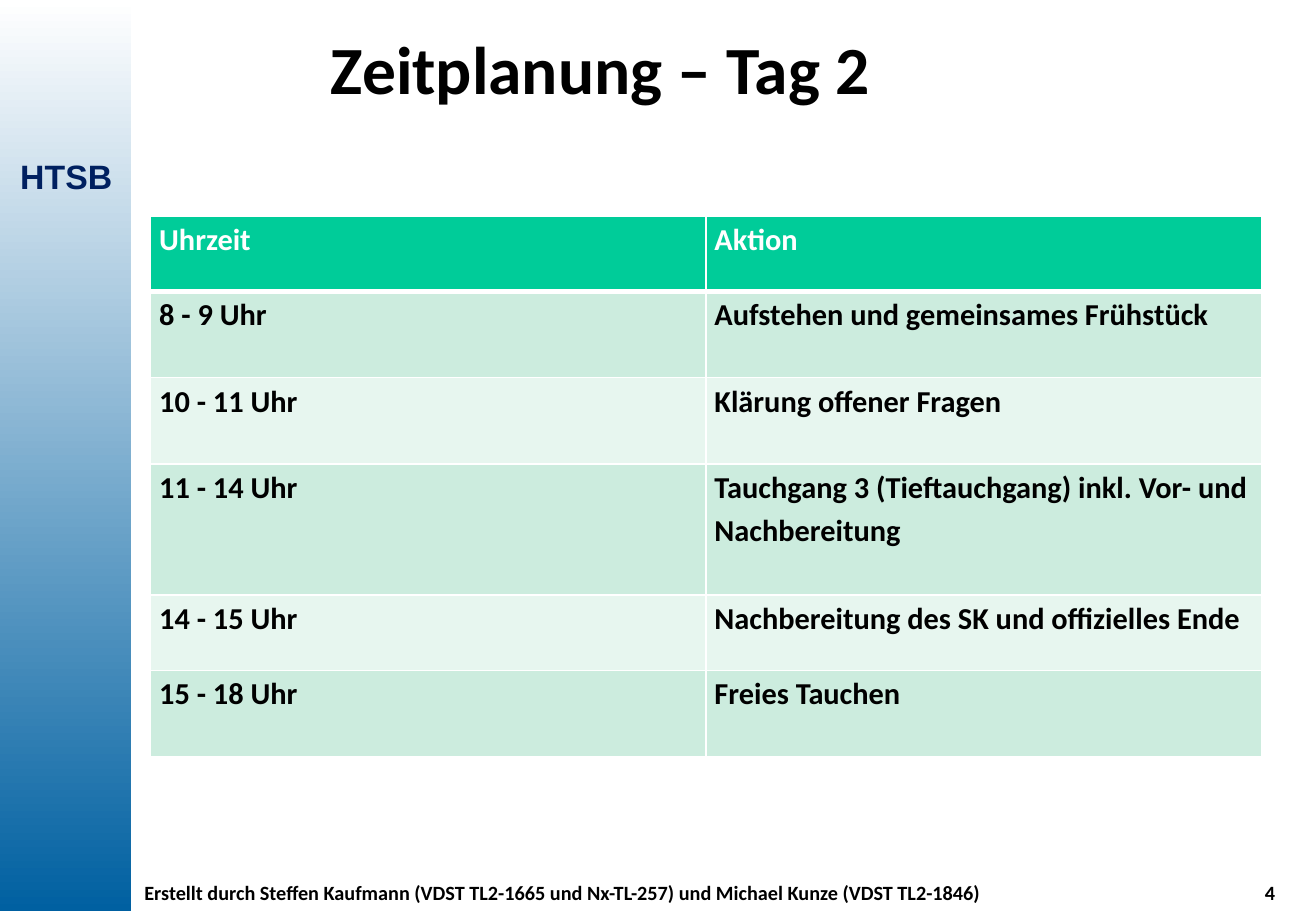
from lxml import etree
from pptx import Presentation
from pptx.dml.color import RGBColor
from pptx.enum import shapes, text
from pptx.oxml.ns import qn
from pptx.util import Inches, Pt

WHITE = RGBColor(0xFF, 0xFF, 0xFF)
BLACK = RGBColor(0, 0, 0)
DEEP_BLUE = RGBColor(0x00, 0x60, 0xA1)
NAVY = RGBColor(0x00, 0x20, 0x60)
HEADER_GREEN = RGBColor(0x00, 0xCC, 0x99)
ROW_GREENS = [RGBColor(0xE7, 0xF6, 0xEF), RGBColor(0xCC, 0xEC, 0xDE)]

SCHEDULE = [
    (0.62, "Uhrzeit", "Aktion"),
    (0.71, "8 - 9 Uhr", "Aufstehen und gemeinsames Frühstück"),
    (0.71, "10 - 11 Uhr", "Klärung offener Fragen"),
    (1.08, "11 - 14 Uhr",
     "Tauchgang 3 (Tieftauchgang) inkl. Vor- und Nachbereitung"),
    (0.62, "14 - 15 Uhr", "Nachbereitung des SK und offizielles Ende"),
    (0.71, "15 - 18 Uhr", "Freies Tauchen"),
]
FOOTER = ("Erstellt durch Steffen Kaufmann (VDST TL2-1665 und Nx-TL-257) "
          "und Michael Kunze (VDST TL2-1846)")


def write(frame, words, size, color=BLACK, font="Calibri", **paragraph_format):
    """Put one bold paragraph into a text frame."""
    frame.text = words
    paragraph = frame.paragraphs[0]
    for name, value in paragraph_format.items():
        setattr(paragraph, name, value)
    run_font = paragraph.runs[0].font
    for name, value in dict(name=font, size=Pt(size), bold=True).items():
        setattr(run_font, name, value)
    run_font.color.rgb = color


def add_side_band(slide):
    band = slide.shapes.add_shape(shapes.MSO_SHAPE.RECTANGLE, 0, 0,
                                  Inches(1.08), Inches(7.5))
    band.shadow.inherit = False
    band.line.fill.background()
    band.fill.gradient()
    band.fill.gradient_angle = 270
    for stop, color in zip(band.fill.gradient_stops, (WHITE, DEEP_BLUE)):
        stop.color.rgb = color


def add_label(slide, box, words, size, wrap=True, **style):
    label = slide.shapes.add_textbox(*map(Inches, box))
    label.text_frame.word_wrap = wrap
    write(label.text_frame, words, size, **style)


def set_title(slide, words):
    title = slide.shapes.title
    place = dict(left=1.24, top=0.14, width=7.4, height=1.01)
    for name, value in place.items():
        setattr(title, name, Inches(value))
    title.text_frame.vertical_anchor = text.MSO_ANCHOR.TOP
    title.text_frame.margin_top = Inches(0.08)
    write(title.text_frame, words, 40, alignment=text.PP_ALIGN.CENTER)


def add_borders(cell, widths):
    """Draw white borders; widths maps the sides L, R, T, B to points."""
    properties = cell._tc.get_or_add_tcPr()
    for side, width in widths.items():
        line = etree.SubElement(properties, qn(f"a:ln{side}"), w=str(Pt(width)))
        fill = etree.SubElement(line, qn("a:solidFill"))
        etree.SubElement(fill, qn("a:srgbClr"), val=str(WHITE))


def add_schedule(slide):
    height = sum(row[0] for row in SCHEDULE)
    box = map(Inches, (1.24, 1.78, 9.14, height))
    table = slide.shapes.add_table(len(SCHEDULE), 2, *box).table
    for i, (row_height, *entries) in enumerate(SCHEDULE):
        table.rows[i].height = Inches(row_height)
        is_header = i == 0
        for cell, words in zip(table.rows[i].cells, entries):
            cell.margin_left = cell.margin_right = Inches(0.07)
            cell.margin_top = cell.margin_bottom = 0
            add_borders(cell, dict(L=1, R=1, T=3 if i == 1 else 1,
                                   B=3 if is_header else 1))
            cell.fill.solid()
            cell.fill.fore_color.rgb = HEADER_GREEN if is_header else ROW_GREENS[i % 2]
            write(cell.text_frame, words, 18, WHITE if is_header else BLACK,
                  line_spacing=1.15, space_after=Pt(6))


def main():
    deck = Presentation()
    deck.slide_width, deck.slide_height = Inches(10.83), Inches(7.5)
    slide = deck.slides.add_slide(deck.slide_layouts[5])
    add_side_band(slide)
    add_label(slide, (0, 1.23, 1.09, 0.44), "HTSB", 20, color=NAVY,
              font="Arial", alignment=text.PP_ALIGN.CENTER)
    add_label(slide, (1.09, 7.2, 7.4, 0.3), FOOTER, 12)
    add_label(slide, (10.31, 7.2, 0.52, 0.3), "4", 12, wrap=False,
              alignment=text.PP_ALIGN.LEFT)
    set_title(slide, "Zeitplanung – Tag 2")
    add_schedule(slide)
    deck.save("out.pptx")


if __name__ == "__main__":
    main()
